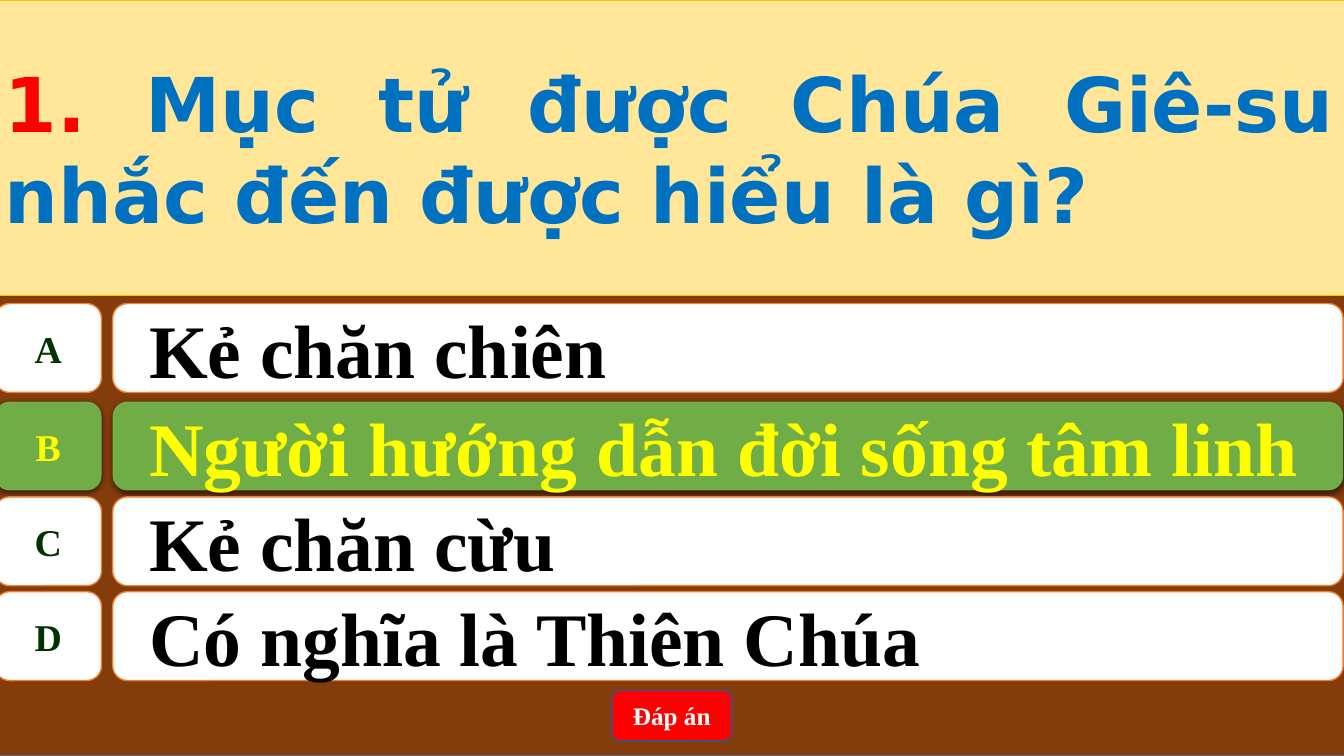
from lxml.etree import SubElement
from pptx import Presentation
from pptx.dml.color import RGBColor
from pptx.enum.shapes import MSO_SHAPE
from pptx.enum.text import MSO_ANCHOR, PP_ALIGN
from pptx.oxml.ns import qn
from pptx.util import Cm, Pt

SERIF = "Times New Roman"
EDGE = -0.13          # left edge of the full-width shapes, in cm
FULL_WIDTH = 34.01
ROW_HEIGHT = 2.24

ANSWERS = [
    ("A", "Kẻ chăn chiên", 7.65),
    ("B", "Người hướng dẫn đời sống tâm linh", 10.12),
    ("C", "Kẻ chăn cừu", 12.52),
    ("D", "Có nghĩa là Thiên Chúa", 14.91),
]
CORRECT = "B"


def color(value):
    return RGBColor.from_string(value)


def add_panel(page, kind, left, top, width, height, fill, line=None, weight=1):
    box = page.shapes.add_shape(kind, Cm(left), Cm(top), Cm(width), Cm(height))
    box.shadow.inherit = False
    box.fill.solid()
    box.fill.fore_color.rgb = color(fill)
    if line:
        box.line.color.rgb = color(line)
        box.line.width = Pt(weight)
    else:
        box.line.fill.background()
    return box


def add_shadow(box):
    effects = box.element.spPr.find(qn("a:effectLst"))
    shadow = SubElement(effects, qn("a:outerShdw"), blurRad=str(Pt(4.5)),
                        dist=str(Pt(1.5)), dir="5400000", rotWithShape="0")
    black = SubElement(shadow, qn("a:srgbClr"), val="000000")
    SubElement(black, qn("a:alpha"), val="63000")


def add_text(box, text, size=54, fill="000000", font=SERIF,
             align=PP_ALIGN.LEFT, margin=0.25, wrap=True):
    """Append a bold span to the first paragraph of the box."""
    frame = box.text_frame
    frame.word_wrap = wrap
    frame.vertical_anchor = MSO_ANCHOR.MIDDLE
    frame.margin_left = Cm(margin)
    para = frame.paragraphs[0]
    para.alignment = align
    span = para.add_run()
    span.text = text
    span.font.name = font
    span.font.size = Pt(size)
    span.font.bold = True
    span.font.color.rgb = color(fill)


def add_question(page):
    box = add_panel(page, MSO_SHAPE.RECTANGLE, EDGE, 0, FULL_WIDTH, 7.44,
                    "FFE699", "FFC000", 0.5)
    style = {"font": "DejaVu Sans", "align": PP_ALIGN.JUSTIFY}
    add_text(box, "1. ", fill="FF0000", **style)
    add_text(box, "Mục tử được Chúa Giê-su nhắc đến được hiểu là gì?",
             fill="0070C0", **style)


def add_answer(page, letter, answer, top, correct):
    fill, line = ("70AD47", None) if correct else ("FFFFFF", "ED7D31")
    bar = add_panel(page, MSO_SHAPE.ROUNDED_RECTANGLE, 2.84, top, 31.01,
                    ROW_HEIGHT, fill, line)
    tag = add_panel(page, MSO_SHAPE.FLOWCHART_ALTERNATE_PROCESS, EDGE, top,
                    2.69, ROW_HEIGHT, fill, line)
    add_text(bar, answer, fill="FFFF00" if correct else "000000", margin=0.81)
    add_text(tag, letter, size=27, fill="FFFF00" if correct else "003300",
             align=PP_ALIGN.CENTER, wrap=False)
    if correct:
        add_shadow(bar)
        add_shadow(tag)


def add_button(page):
    box = add_panel(page, MSO_SHAPE.ROUNDED_RECTANGLE, 15.42, 17.4, 3.02, 1.27,
                    "FF0000", "325491")
    add_text(box, "Đáp án", size=18, fill="FFFFFF", align=PP_ALIGN.CENTER)


def main():
    deck = Presentation()
    deck.slide_width, deck.slide_height = Cm(33.87), Cm(19.05)
    page = deck.slides.add_slide(deck.slide_layouts[6])

    # Brown backdrop
    add_panel(page, MSO_SHAPE.RECTANGLE, EDGE, 0, FULL_WIDTH, 19.05,
              "843C0B", "43739E")

    # Question and its answers
    add_question(page)
    for letter, answer, top in ANSWERS:
        add_answer(page, letter, answer, top, letter == CORRECT)

    # Button that reveals the answer
    add_button(page)
    deck.save("out.pptx")


if __name__ == "__main__":
    main()
